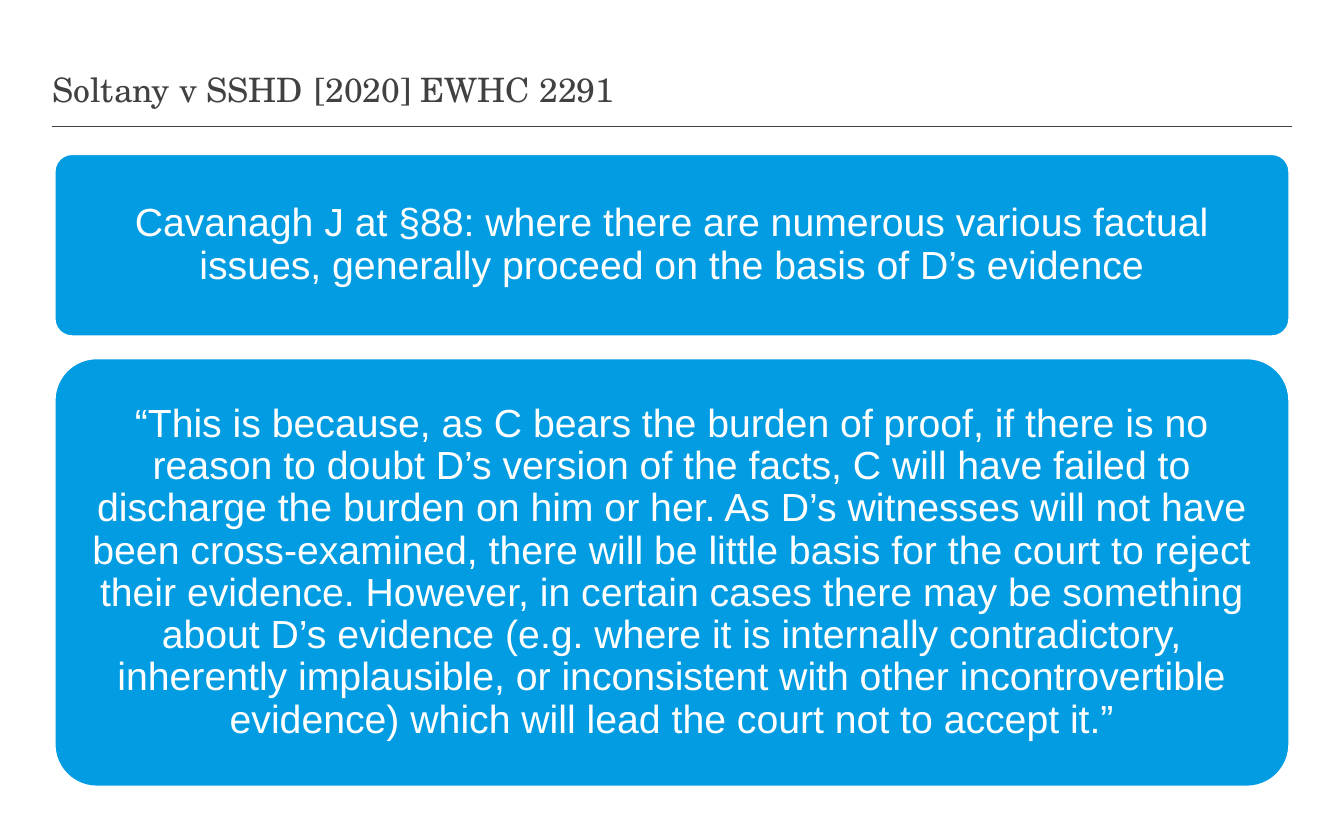
import pptx
import pptx.util
import pptx.dml.color
import pptx.enum.shapes
import pptx.enum.text
import lxml.etree

Pt = pptx.util.Pt
TITLE = "Soltany v SSHD\u00a0[2020] EWHC 2291".replace("\u00a0", "\N{NO-BREAK SPACE}")
CARDS = [
    (98.6, "Cavanagh J at §88: where there are numerous various factual issues, "
     "generally proceed on the basis of D’s evidence"),
    (230.4, "“This is because, as C bears the burden of proof, if there is no reason "
     "to doubt D’s version of the facts, C will have failed to discharge the burden "
     "on him or her. As D’s witnesses will not have been cross-examined, there will "
     "be little basis for the court to reject their evidence. However, in certain "
     "cases there may be something about D’s evidence (e.g. where it is internally "
     "contradictory, inherently implausible, or inconsistent with other "
     "incontrovertible evidence) which will lead the court not to accept it.”"),
]
WIDE, HIGH = 720, 450
EDGE, RULE = 28.1, 67.7
LEFT, TOP, GAP = 28.8, 82.1, 10.8
INK, BLUE, WHITE = "414042", "029CE2", "FFFFFF"


def tint(code):
    """Return the colour for a hex string."""
    return pptx.dml.color.RGBColor.from_string(code)


def write(shape, text, inset, anchor, align, size, face, code, lead):
    """Put one formatted paragraph in a shape."""
    frame = shape.text_frame
    form = {"word_wrap": True, "vertical_anchor": anchor,
            "auto_size": pptx.enum.text.MSO_AUTO_SIZE.NONE}
    for side in ("left", "top", "right", "bottom"):
        form["margin_" + side] = Pt(inset)
    for key, value in form.items():
        setattr(frame, key, value)
    para = frame.paragraphs[0]
    for key, value in {"alignment": align, "line_spacing": lead,
                       "space_before": Pt(0)}.items():
        setattr(para, key, value)
    run = para.add_run()
    run.text = text
    for key, value in {"size": Pt(size), "name": face, "bold": False}.items():
        setattr(run.font, key, value)
    run.font.color.rgb = tint(code)


def draw_rule(slide):
    """Draw the line under the title."""
    line = slide.shapes.add_connector(
        pptx.enum.shapes.MSO_CONNECTOR.STRAIGHT,
        Pt(EDGE), Pt(RULE), Pt(WIDE - EDGE), Pt(RULE))
    line.line.color.rgb = tint(INK)
    line.line.width = Pt(0.75)
    lxml.etree.SubElement(line._element.spPr, pptx.oxml.ns.qn("a:effectLst"))


def draw_card(slide, top, high, text):
    """Draw one rounded card with its text."""
    card = slide.shapes.add_shape(
        pptx.enum.shapes.MSO_SHAPE.ROUNDED_RECTANGLE,
        Pt(LEFT), Pt(top), Pt(WIDE - 2 * LEFT), Pt(high))
    card.adjustments[0] = 0.1
    card.shadow.inherit = False
    card.fill.solid()
    card.fill.fore_color.rgb = tint(BLUE)
    card.line.color.rgb = tint(WHITE)
    card.line.width = Pt(2)
    write(card, text, 6.5, pptx.enum.text.MSO_ANCHOR.MIDDLE,
          pptx.enum.text.PP_ALIGN.CENTER, 21, "Arial", WHITE, 0.9)


def main():
    """Build and save the slide."""
    deck = pptx.Presentation()
    deck.slide_width, deck.slide_height = Pt(WIDE), Pt(HIGH)
    slide = deck.slides.add_slide(deck.slide_layouts[5])
    title = slide.shapes.title
    for key, value in {"left": EDGE, "top": 36.7, "width": 489, "height": 25.2}.items():
        setattr(title, key, Pt(value))
    write(title, TITLE, 0, pptx.enum.text.MSO_ANCHOR.TOP,
          pptx.enum.text.PP_ALIGN.LEFT, 18, "TeX Gyre Schola", INK, 1.0)
    draw_rule(slide)
    top = TOP
    for high, text in CARDS:
        draw_card(slide, top, high, text)
        top += high + GAP
    deck.save("out.pptx")


if __name__ == "__main__":
    main()
